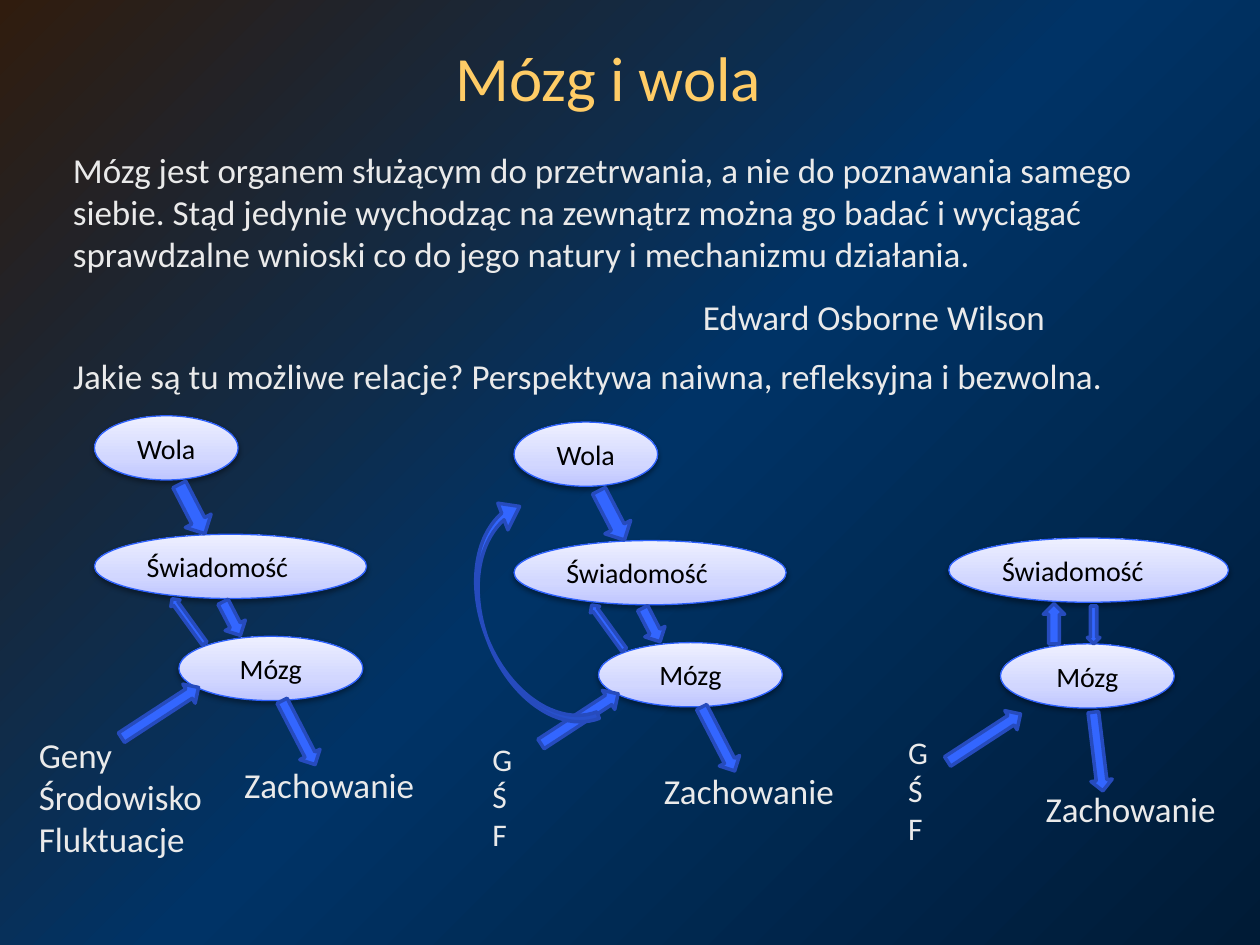
from lxml import etree
from pptx import Presentation
from pptx import util as u
from pptx.dml.color import RGBColor
from pptx.enum import shapes, text
from pptx.oxml.ns import qn

FONT = "Calibri"
GOLD = RGBColor(0xFF, 0xCC, 0x66)
PALE = RGBColor(0xEA, 0xEA, 0xEA)
BLACK = RGBColor(0, 0, 0)
BLUE = RGBColor(0x33, 0x66, 0xFF)
BLUE_EDGE = RGBColor(0x26, 0x4B, 0xBD)
OVAL_EDGE = RGBColor(0x2D, 0x61, 0xFE)
SKY = [(0, RGBColor(0x30, 0x1C, 0x0E)), (50, RGBColor(0, 0x33, 0x66)),
       (100, RGBColor(0, 0x1B, 0x36))]
LILAC = [(0, RGBColor(0xBF, 0xC6, 0xFF)), (35, RGBColor(0xD2, 0xD7, 0xFF)),
         (100, RGBColor(0xEE, 0xF0, 0xFF))]

LEFT, CENTER, JUSTIFY = (text.PP_ALIGN.LEFT, text.PP_ALIGN.CENTER,
                         text.PP_ALIGN.JUSTIFY)
SHAPE = shapes.MSO_SHAPE


def inches(*values):
    return [u.Inches(v) for v in values]


def gradient(fill, element, stops, angle):
    """Fill with any number of stops; angle runs counter-clockwise."""
    fill.gradient()
    fill.gradient_angle = angle
    gs_lst = next(element.iter(qn("a:gsLst")))
    for gs in list(gs_lst):
        gs_lst.remove(gs)
    for pos, color in stops:
        gs = etree.SubElement(gs_lst, qn("a:gs"), pos=str(pos * 1000))
        etree.SubElement(gs, qn("a:srgbClr"), val=str(color))


def shadow_effect(blur, dist, angle, alpha):
    effects = etree.Element(qn("a:effectLst"))
    outer = etree.SubElement(
        effects, qn("a:outerShdw"), blurRad=str(u.Pt(blur)),
        dist=str(u.Pt(dist)), dir=str(angle * 60000), rotWithShape="0")
    color = etree.SubElement(outer, qn("a:srgbClr"), val=str(BLACK))
    etree.SubElement(color, qn("a:alpha"), val=str(alpha * 1000))
    return effects


def write(tf, content, size=20, color=PALE, align=LEFT, before=0, indent=0,
          append=False):
    """Write one paragraph per line of content and return the last run."""
    tf.word_wrap = True
    for i, line in enumerate(content.split("\n")):
        p = tf.add_paragraph() if append or i else tf.paragraphs[0]
        p.alignment = align
        p.space_before = u.Pt(before)
        pPr = p._p.get_or_add_pPr()
        pPr.set("marL", str(u.Inches(indent)))
        pPr.set("indent", "0")
        etree.SubElement(pPr, qn("a:buNone"))
        r = p.add_run()
        r.text = line
        r.font.name, r.font.size = FONT, u.Pt(size)
        r.font.color.rgb = color
    return r


class Deck:
    def __init__(self):
        self.prs = Presentation()
        self.prs.slide_width, self.prs.slide_height = inches(10, 7.5)
        self.s = self.prs.slides.add_slide(self.prs.slide_layouts[1])
        self.target = self.s.shapes
        self.dx = self.dy = 0
        gradient(self.s.background.fill, self.s._element, SKY, 315)

    def start_group(self, dx=0, dy=0):
        """Put the following elements in a new group, shifted by dx, dy."""
        self.target = self.s.shapes.add_group_shape().shapes
        self.dx, self.dy = dx, dy

    def end_group(self):
        self.target = self.s.shapes
        self.dx = self.dy = 0

    def box(self, x, y, w, h):
        return inches(x + self.dx, y + self.dy, w, h)

    def placeholder(self, idx, box, content, **style):
        sp = self.s.placeholders[idx]
        sp.left, sp.top, sp.width, sp.height = inches(*box)
        sp.text_frame.auto_size = text.MSO_AUTO_SIZE.NONE
        return write(sp.text_frame, content, **style)

    def label(self, x, y, w, h, content, **style):
        tf = self.target.add_textbox(*self.box(x, y, w, h)).text_frame
        write(tf, content, **style)
        return tf

    def oval(self, x, y, w, content, align=CENTER):
        sp = self.target.add_shape(SHAPE.OVAL, *self.box(x, y, w, 0.51))
        gradient(sp.fill, sp._element, LILAC, 90)
        sp.line.color.rgb, sp.line.width = OVAL_EDGE, u.Pt(0.75)
        sp._element.spPr.append(shadow_effect(3.1, 1.6, 90, 38))
        sp.text_frame.vertical_anchor = text.MSO_ANCHOR.MIDDLE
        write(sp.text_frame, content, size=16, color=BLACK, align=align)

    def arrow(self, x, y, w, h, rotation=0, kind=SHAPE.DOWN_ARROW, adj=()):
        sp = self.target.add_shape(kind, *self.box(x, y, w, h))
        sp.rotation = rotation
        sp.shadow.inherit = False
        sp.fill.solid()
        sp.fill.fore_color.rgb = BLUE
        sp.line.color.rgb, sp.line.width = BLUE_EDGE, u.Pt(2)
        for i, value in enumerate(adj):
            sp.adjustments[i] = value


def will_diagram(deck, dx, dy):
    """Will acts on consciousness, which exchanges signals with the brain."""
    deck.start_group(dx, dy)
    deck.oval(0.75, 4.24, 2.16, "Świadomość", align=JUSTIFY)
    deck.oval(1.42, 5.05, 1.46, "Mózg")
    deck.oval(0.75, 3.3, 1.14, "Wola")
    deck.label(1.84, 6.01, 1.84, 0.44, "Zachowanie", align=JUSTIFY)
    for box in ((1.41, 3.82, 0.23, 0.44), (1.75, 4.76, 0.18, 0.3),
                (2.28, 5.53, 0.18, 0.57)):
        deck.arrow(*box, rotation=332.6)
    deck.arrow(1.18, 5.29, 0.18, 0.73, rotation=236.9)
    deck.arrow(1.45, 4.71, 0.09, 0.44, rotation=144.1)


def no_will_diagram(deck):
    deck.start_group()
    deck.oval(7.53, 4.27, 2.22, "Świadomość", align=JUSTIFY)
    deck.oval(7.94, 5.11, 1.38, "Mózg")
    deck.label(8.2, 6.2, 1.75, 0.44, "Zachowanie", align=JUSTIFY)
    deck.arrow(8.63, 4.81, 0.1, 0.3)
    deck.arrow(8.63, 5.65, 0.17, 0.63, rotation=353.1)
    deck.arrow(7.72, 5.51, 0.18, 0.69, rotation=236.9)
    deck.arrow(8.28, 4.79, 0.17, 0.32, rotation=180)
    deck.label(7.11, 5.77, 0.42, 1.01, "G\nŚ\nF", size=18, align=JUSTIFY)


def main():
    deck = Deck()
    title = deck.placeholder(0, (0.58, 0.17, 8.5, 0.87), "Mózg i wola",
                             size=36, color=GOLD, align=CENTER)
    title._r.rPr.find(qn("a:solidFill")).addnext(shadow_effect(0, 2, 45, 100))
    deck.placeholder(
        1, (0.48, 2.76, 9.35, 0.62),
        "Jakie są tu możliwe relacje? Perspektywa naiwna, refleksyjna i bezwolna.")
    quote = deck.label(
        0.48, 1.13, 9.14, 1.6,
        "Mózg jest organem służącym do przetrwania, a nie do poznawania samego "
        "siebie. Stąd jedynie wychodząc na zewnątrz można go badać i wyciągać "
        "sprawdzalne wnioski co do jego natury i mechanizmu działania.")
    write(quote, "Edward Osborne Wilson", before=12, indent=5, append=True)

    will_diagram(deck, 0, 0)
    deck.label(0.21, 5.77, 1.84, 1.11, "Geny\nŚrodowisko\nFluktuacje",
               align=JUSTIFY)
    will_diagram(deck, 3.33, 0.05)
    deck.label(0.48, 5.77, 0.38, 1.01, "G\nŚ\nF", size=18, align=JUSTIFY)
    no_will_diagram(deck)
    deck.end_group()
    deck.arrow(3.18, 4.61, 1.91, 0.61, rotation=249.4,
               kind=SHAPE.CURVED_DOWN_ARROW, adj=(0.09, 0.37, 0.25))
    deck.prs.save("out.pptx")


if __name__ == "__main__":
    main()
